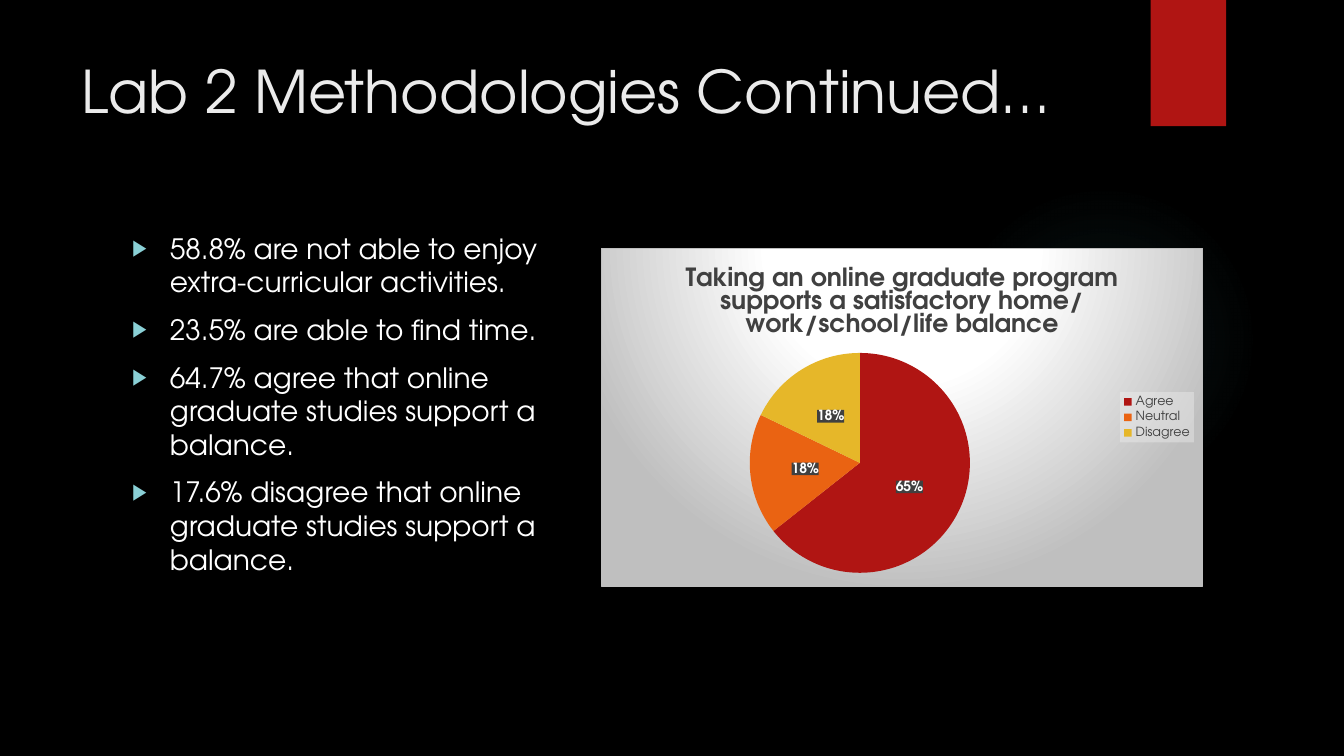
from lxml import etree
from pptx import Presentation
from pptx import util as u
from pptx.chart.data import CategoryChartData
from pptx.dml.color import RGBColor
from pptx.enum import chart as charts, shapes, text
from pptx.oxml import parse_xml
from pptx.oxml.ns import nsdecls, qn

COLORS = {
    "background": "000000", "title": "EBEBEB", "body": "FFFFFF",
    "bullet": "8AD0D6", "glow": "50B9C1", "red": "B01513",
    "orange": "EA6312", "yellow": "E6B729", "dark": "404040",
    "silver": "BFBFBF", "pale": "F2F2F2",
}


def rgb(name):
    return RGBColor.from_string(COLORS[name])


def color_xml(name, alpha):
    return f'<a:srgbClr val="{COLORS[name]}"><a:alpha val="{alpha * 1000}"/></a:srgbClr>'


def gradient_xml(stops, top, bottom):
    marks = "".join(f'<a:gs pos="{position * 1000}">{color_xml(name, alpha)}</a:gs>'
                    for position, name, alpha in stops)
    return (f'<a:gradFill {nsdecls("a")} rotWithShape="1"><a:gsLst>{marks}</a:gsLst>'
            f'<a:path path="circle"><a:fillToRect l="50000" t="{top * 1000}" '
            f'r="50000" b="{bottom * 1000}"/></a:path></a:gradFill>')


def panel_xml(fill, line=""):
    return parse_xml(f'<c:spPr {nsdecls("c", "a")}>{fill}{line}</c:spPr>')


def solid_xml(name, alpha):
    return f"<a:solidFill>{color_xml(name, alpha)}</a:solidFill>"


class SlideBuilder:
    font_name = "TeX Gyre Adventor"

    def __init__(self, presentation):
        self.slide = presentation.slides.add_slide(presentation.slide_layouts[5])
        fill = self.slide.background.fill
        fill.solid()
        fill.fore_color.rgb = rgb("background")

    def box(self, left, top, width, height):
        return [u.Cm(length) for length in (left, top, width, height)]

    def style(self, font, size, color, bold=False):
        font.name, font.size, font.bold = self.font_name, u.Pt(size), bold
        font.color.rgb = rgb(color)

    def shape(self, kind, place, color):
        shape = self.slide.shapes.add_shape(kind, *self.box(*place))
        shape.shadow.inherit = False
        shape.fill.solid()
        shape.fill.fore_color.rgb = rgb(color)
        shape.line.fill.background()
        return shape

    def glow(self, place):
        shape = self.shape(shapes.MSO_SHAPE.OVAL, place, "glow")
        properties = shape._element.spPr
        stops = [(0, "glow", 7), (36, "glow", 6), (69, "glow", 0)]
        properties.replace(properties.find(qn("a:solidFill")),
                           parse_xml(gradient_xml(stops, 50, 50)))

    def title(self, wording, place):
        title = self.slide.shapes.title
        title.left, title.top, title.width, title.height = self.box(*place)
        frame = title.text_frame
        frame.text = wording
        frame.word_wrap = True
        frame.auto_size = text.MSO_AUTO_SIZE.NONE
        frame.vertical_anchor = text.MSO_ANCHOR.TOP
        paragraph = frame.paragraphs[0]
        paragraph.alignment = text.PP_ALIGN.LEFT
        self.style(paragraph.font, 42, "title")

    def bullets(self, items, place):
        frame = self.slide.shapes.add_textbox(*self.box(*place)).text_frame
        frame.word_wrap = True
        for index, item in enumerate(items):
            paragraph = frame.paragraphs[0] if index == 0 else frame.add_paragraph()
            paragraph.text = item
            if index:
                paragraph.space_before = u.Pt(10)
            properties = paragraph._p.get_or_add_pPr()
            properties.set("marL", str(u.Cm(0.95)))
            properties.set("indent", str(-u.Cm(0.95)))
            color = etree.SubElement(properties, qn("a:buClr"))
            etree.SubElement(color, qn("a:srgbClr"), val=COLORS["bullet"])
            etree.SubElement(properties, qn("a:buSzPct"), val="80000")
            etree.SubElement(properties, qn("a:buFont"), typeface="Arial")
            etree.SubElement(properties, qn("a:buChar"), char="▶")
            self.style(paragraph.font, 20, "body")

    def pie(self, heading, slices, place):
        data = CategoryChartData()
        data.categories = [name for name, value, color in slices]
        data.add_series("Series 1", [value for name, value, color in slices])
        chart = self.slide.shapes.add_chart(
            charts.XL_CHART_TYPE.PIE, *self.box(*place), data).chart
        self.style(chart.font, 10, "body")
        chart.has_title = True
        chart.chart_title.include_in_layout = False
        chart.chart_title.text_frame.text = heading
        self.style(chart.chart_title.text_frame.paragraphs[0].font, 18, "dark", True)
        chart.has_legend = True
        legend = chart.legend
        legend.position = charts.XL_LEGEND_POSITION.RIGHT
        legend.include_in_layout = False
        self.style(legend.font, 9, "dark")
        legend._element.find(qn("c:txPr")).addprevious(panel_xml(solid_xml("pale", 39)))

        plot = chart.plots[0]
        plot.vary_by_categories = True
        for point, (name, value, color) in enumerate(slices):
            fill = plot.series[0].points[point].format.fill
            fill.solid()
            fill.fore_color.rgb = rgb(color)
        labels = plot.series[0].data_labels
        labels.show_percentage, labels.show_value = False, True
        labels.number_format, labels.number_format_is_linked = '0"%"', False
        labels.position = charts.XL_LABEL_POSITION.CENTER
        self.style(labels.font, 10, "body", True)
        labels._element.find(qn("c:txPr")).addprevious(panel_xml(solid_xml("dark", 90)))

        plot_area = chart._chartSpace.chart.plotArea
        for previous in plot_area.findall(qn("c:layout")):
            plot_area.remove(previous)
        layout = etree.Element(qn("c:layout"))
        manual = etree.SubElement(layout, qn("c:manualLayout"))
        for tag, setting in (("layoutTarget", "inner"), ("xMode", "edge"), ("yMode", "edge"),
                             ("x", "0.24"), ("y", "0.31"), ("w", "0.38"), ("h", "0.65")):
            etree.SubElement(manual, qn(f"c:{tag}"), val=setting)
        plot_area.insert(0, layout)

        stops = [(0, "body", 100), (39, "body", 100), (100, "silver", 100)]
        border = f'<a:ln w="{u.Pt(0.75)}">{solid_xml("silver", 100)}</a:ln>'
        chart._chartSpace.chart.addnext(panel_xml(gradient_xml(stops, -80, 180), border))


def main():
    presentation = Presentation()
    presentation.slide_width, presentation.slide_height = u.Cm(33.87), u.Cm(19.05)
    builder = SlideBuilder(presentation)
    builder.glow((23.9, 4.65, 7.82, 7.82))
    builder.shape(shapes.MSO_SHAPE.RECTANGLE, (29, 0, 1.9, 3.18), "red")
    builder.title("Lab 2 Methodologies Continued…", (1.8, 1.25, 26.14, 3.89))
    builder.bullets([
        "58.8% are not able to enjoy extra-curricular activities.",
        "23.5% are able to find time.",
        "64.7% agree that online graduate studies support a balance.",
        "17.6% disagree that online graduate studies support a balance.",
    ], (3.08, 5.7, 10.74, 11.66))
    builder.pie(
        "Taking an online graduate program supports a satisfactory home/work/school/life balance",
        [("Agree", 65, "red"), ("Neutral", 18, "orange"), ("Disagree", 18, "yellow")],
        (15.15, 6.24, 15.16, 8.55))
    presentation.save("out.pptx")


if __name__ == "__main__":
    main()
